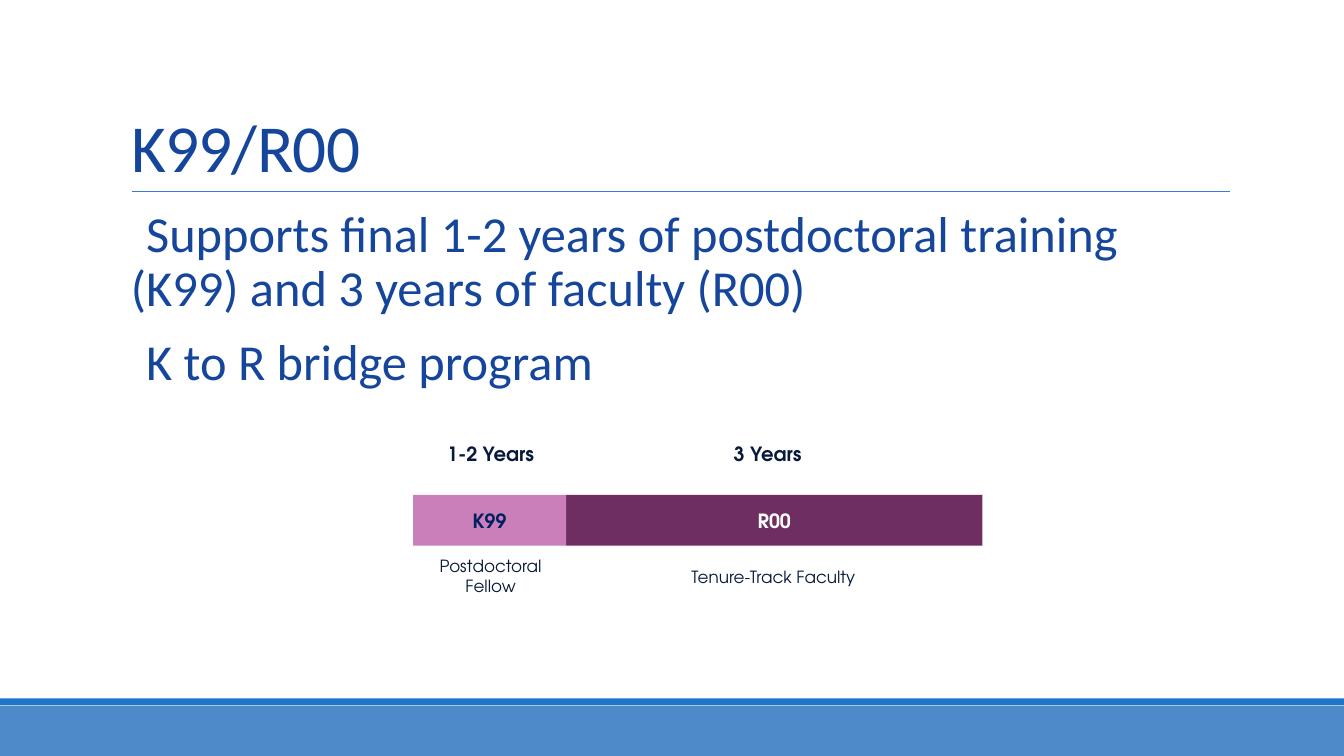
"""Build the K99/R00 slide: title, two statements and a funding timeline."""
from lxml.etree import SubElement
from pptx import Presentation
from pptx.dml.color import RGBColor
from pptx.enum.shapes import MSO_CONNECTOR, MSO_SHAPE
from pptx.enum.text import MSO_ANCHOR, MSO_AUTO_SIZE, PP_ALIGN
from pptx.oxml.ns import qn
from pptx.util import Cm, Pt

BLUE = "15469C"
ACCENT = "1C75C6"
NAVY = "081A3A"
BODY_FONT = "Calibri"
TIMELINE_FONT = "TeX Gyre Adventor"


def colour(value):
    return RGBColor.from_string(value)


def style(para, name, size, ink, bold=False):
    para.font.name = name
    para.font.size = Pt(size)
    para.font.bold = bold
    para.font.color.rgb = colour(ink)


def add_bar(page, left, top, width, height, fill):
    bar = page.shapes.add_shape(
        MSO_SHAPE.RECTANGLE, Cm(left), Cm(top), Cm(width), Cm(height))
    bar.shadow.inherit = False
    bar.fill.solid()
    bar.fill.fore_color.rgb = colour(fill)
    bar.line.fill.background()
    return bar


def add_rule(page, left, right, top):
    rule = page.shapes.add_connector(
        MSO_CONNECTOR.STRAIGHT, Cm(left), Cm(top), Cm(right), Cm(top))
    rule.line.color.rgb = colour("3C78E4")
    rule.line.width = Pt(0.5)
    SubElement(rule.element.spPr, qn("a:effectLst"))


def set_title(page, words):
    title = page.shapes.title
    title.left, title.top, title.width, title.height = (
        Cm(3.05), Cm(0.79), Cm(27.94), Cm(4.04))
    frame = title.text_frame
    frame.text = words
    frame.word_wrap = True
    frame.auto_size = MSO_AUTO_SIZE.NONE
    frame.vertical_anchor = MSO_ANCHOR.BOTTOM
    para = frame.paragraphs[0]
    para.alignment = PP_ALIGN.LEFT
    para.line_spacing = 0.85
    style(para, BODY_FONT, 48, BLUE)
    para._p.get_or_add_pPr().get_or_add_defRPr().set("spc", "-50")


def set_blank_bullet(para):
    properties = para._p.get_or_add_pPr()
    properties.set("marL", str(Cm(0.25)))
    properties.set("indent", str(-Cm(0.25)))
    bullet_colour = SubElement(properties, qn("a:buClr"))
    SubElement(bullet_colour, qn("a:srgbClr")).set("val", ACCENT)
    SubElement(properties, qn("a:buChar")).set("char", " ")


def add_statements(page, statements):
    box = page.shapes.add_textbox(Cm(3.05), Cm(5.13), Cm(27.94), Cm(11.18))
    frame = box.text_frame
    frame.word_wrap = True
    frame.margin_left = frame.margin_right = 0
    frame.text = "\n".join(statements)
    for para in frame.paragraphs:
        para.line_spacing = 0.9
        para.space_before = Pt(12)
        para.space_after = Pt(2)
        set_blank_bullet(para)
        style(para, BODY_FONT, 36, BLUE)


def write_centred(box, words, size, ink, bold):
    frame = box.text_frame
    frame.word_wrap = True
    frame.text = words
    para = frame.paragraphs[0]
    para.alignment = PP_ALIGN.CENTER
    style(para, TIMELINE_FONT, size, ink, bold)


def add_label(page, words, left, top, width, height, size, bold=False):
    box = page.shapes.add_textbox(Cm(left), Cm(top), Cm(width), Cm(height))
    write_centred(box, words, size, NAVY, bold)


def add_phase(page, words, left, width, fill, ink):
    bar = add_bar(page, left, 12.47, width, 1.28, fill)
    bar.text_frame.vertical_anchor = MSO_ANCHOR.MIDDLE
    write_centred(bar, words, 14, ink, True)


def main():
    deck = Presentation()
    deck.slide_width, deck.slide_height = Cm(33.87), Cm(19.05)
    page = deck.slides.add_slide(deck.slide_layouts[5])

    add_bar(page, 0, 17.78, 33.87, 1.27, "4E89CA")
    add_bar(page, 0, 17.6, 33.87, 0.17, ACCENT)
    add_rule(page, 3.33, 31, 4.83)
    set_title(page, "K99/R00")
    add_statements(page, [
        "Supports final 1-2 years of postdoctoral training (K99) "
        "and 3 years of faculty (R00)",
        "K to R bridge program",
    ])

    add_label(page, "1-2 Years", 10.41, 11.02, 3.91, 0.86, 14, True)
    add_label(page, "3 Years", 17.48, 11.02, 3.73, 0.86, 14, True)
    add_label(page, "Tenure-Track Faculty", 16.99, 14.15, 5, 0.76, 12)
    add_label(page, "Postdoctoral Fellow", 10.41, 13.87, 3.91, 1.27, 12)
    add_phase(page, "R00", 14.27, 10.49, "6E2E61", "FFFFFF")
    add_phase(page, "K99", 10.41, 3.86, "CA7FBA", "002060")

    deck.save("out.pptx")


if __name__ == "__main__":
    main()
